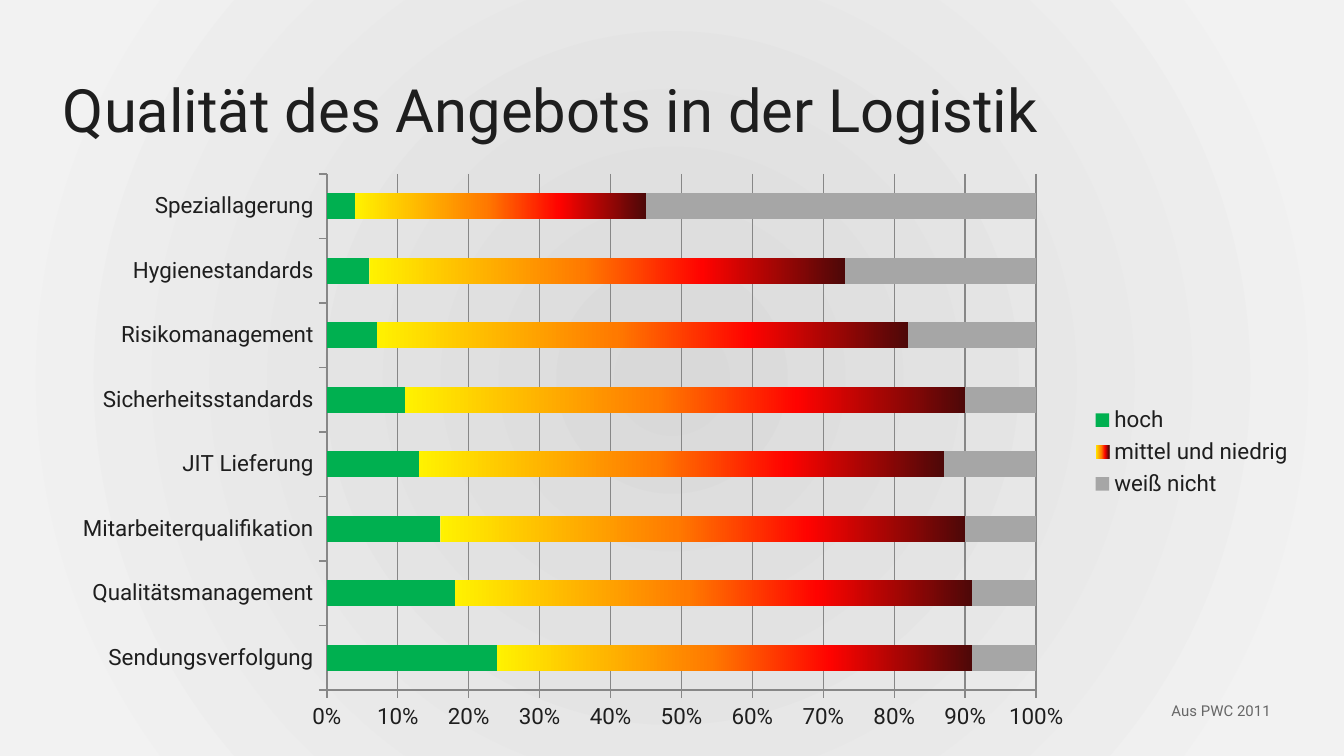
from dataclasses import dataclass
from typing import Union

from lxml.etree import SubElement
from pptx import Presentation
from pptx.chart.data import CategoryChartData
from pptx.dml.color import RGBColor
from pptx.enum.chart import XL_CHART_TYPE as ChartType
from pptx.enum.chart import XL_LEGEND_POSITION as LegendPosition
from pptx.enum.chart import XL_TICK_MARK as TickMark
from pptx.enum.text import MSO_ANCHOR as Anchor
from pptx.enum.text import MSO_AUTO_SIZE as AutoSize
from pptx.enum.text import PP_ALIGN as Align
from pptx.oxml import parse_xml
from pptx.oxml.ns import nsdecls, qn
from pptx.util import Cm, Pt


@dataclass(frozen=True)
class Gradient:
    stops: tuple[tuple[int, str], ...]
    radial: bool = False


@dataclass(frozen=True)
class Theme:
    font: str = "Roboto"
    ink: str = "1E1E1E"
    muted: str = "666666"
    grid: str = "878787"
    high: str = "00B050"
    unknown: str = "A6A6A6"
    rated: Gradient = Gradient(
        ((0, "FFF200"), (45, "FF7A00"), (70, "FF0300"), (100, "4D0808"))
    )
    backdrop: Gradient = Gradient(((0, "D9D9D9"), (90, "F2F2F2")), radial=True)
    title_size: int = 32
    chart_size: int = 12
    source_size: int = 8


@dataclass(frozen=True)
class Box:
    left: float
    top: float
    width: float
    height: float

    def lengths(self) -> tuple[Cm, Cm, Cm, Cm]:
        return Cm(self.left), Cm(self.top), Cm(self.width), Cm(self.height)


@dataclass(frozen=True)
class Rating:
    name: str
    shares: tuple[float, ...]
    paint: Union[str, Gradient]


THEME = Theme()
TITLE_BOX = Box(1.09, 1.27, 23.6, 1.22)
CHART_BOX = Box(1.09, 3.07, 23.6, 10.95)
SOURCE_BOX = Box(21.89, 13.13, 3, 0.61)
PLOT_AREA = {"x": 0.2156, "y": 0.02, "w": 0.568, "h": 0.891}

SERVICES = (
    "Sendungsverfolgung",
    "Qualitätsmanagement",
    "Mitarbeiterqualifikation",
    "JIT Lieferung",
    "Sicherheitsstandards",
    "Risikomanagement",
    "Hygienestandards",
    "Speziallagerung",
)
RATINGS = (
    Rating("hoch", (0.24, 0.18, 0.16, 0.13, 0.11, 0.07, 0.06, 0.04), THEME.high),
    Rating(
        "mittel und niedrig",
        (0.67, 0.73, 0.74, 0.74, 0.79, 0.75, 0.67, 0.41),
        THEME.rated,
    ),
    Rating("weiß nicht", (0.09, 0.09, 0.1, 0.13, 0.1, 0.18, 0.27, 0.55), THEME.unknown),
)


def apply_paint(fill, owner, paint: Union[str, Gradient]) -> None:
    fill.solid()
    if isinstance(paint, str):
        fill.fore_color.rgb = RGBColor.from_string(paint)
        return
    stops = "".join(
        f'<a:gs pos="{place * 1000}"><a:srgbClr val="{color}"/></a:gs>'
        for place, color in paint.stops
    )
    direction = (
        '<a:path path="circle"><a:fillToRect l="50000" t="50000" r="50000" b="50000"/></a:path>'
        if paint.radial
        else '<a:lin ang="0" scaled="0"/>'
    )
    gradient = parse_xml(
        f'<a:gradFill rotWithShape="1" {nsdecls("a")}>'
        f"<a:gsLst>{stops}</a:gsLst>{direction}</a:gradFill>"
    )
    solid = next(owner.iter(qn("a:solidFill")))
    solid.getparent().replace(solid, gradient)


def style_font(font, size: int, color: str) -> None:
    font.name = THEME.font
    font.size = Pt(size)
    font.color.rgb = RGBColor.from_string(color)


def write_line(frame, words: str, size: int, color: str) -> None:
    paragraph = frame.paragraphs[0]
    paragraph.alignment = Align.LEFT
    run = paragraph.add_run()
    run.text = words
    style_font(run.font, size, color)


def add_title(slide, words: str) -> None:
    title = slide.shapes.title
    title.left, title.top, title.width, title.height = TITLE_BOX.lengths()
    frame = title.text_frame
    frame.auto_size = AutoSize.NONE
    frame.vertical_anchor = Anchor.TOP
    frame.margin_left = frame.margin_right = Cm(0.1)
    frame.margin_top = frame.margin_bottom = Cm(0.1)
    write_line(frame, words, THEME.title_size, THEME.ink)


def place_plot(chart) -> None:
    plot_area = next(chart.element.iter(qn("c:plotArea")))
    for old in plot_area.findall(qn("c:layout")):
        plot_area.remove(old)
    layout = parse_xml(f'<c:layout {nsdecls("c")}/>')
    plot_area.insert(0, layout)
    manual = SubElement(layout, qn("c:manualLayout"))
    settings = {"layoutTarget": "inner", "xMode": "edge", "yMode": "edge", **PLOT_AREA}
    for tag, value in settings.items():
        SubElement(manual, qn(f"c:{tag}")).set("val", str(value))


def style_line(line) -> None:
    line.color.rgb = RGBColor.from_string(THEME.grid)
    line.width = Pt(0.75)


def add_rating_chart(slide) -> None:
    ratings_data = CategoryChartData(number_format="0%")
    ratings_data.categories = SERVICES
    for rating in RATINGS:
        ratings_data.add_series(rating.name, rating.shares)
    chart = slide.shapes.add_chart(
        ChartType.BAR_STACKED, *CHART_BOX.lengths(), ratings_data
    ).chart
    style_font(chart.font, THEME.chart_size, THEME.ink)
    chart.has_title = False
    chart.has_legend = True
    chart.legend.position = LegendPosition.RIGHT
    chart.legend.include_in_layout = False

    plot = chart.plots[0]
    plot.gap_width = 150
    plot.overlap = 100
    plot.vary_by_categories = False
    for series, rating in zip(plot.series, RATINGS):
        apply_paint(series.format.fill, series.format.element if hasattr(series.format, "element") else series._element, rating.paint)

    for axis in (chart.category_axis, chart.value_axis):
        axis.major_tick_mark = TickMark.OUTSIDE
        axis.minor_tick_mark = TickMark.NONE
        style_line(axis.format.line)
    shares = chart.value_axis
    shares.minimum_scale, shares.maximum_scale, shares.major_unit = 0, 1, 0.1
    shares.tick_labels.number_format = "0%"
    shares.tick_labels.number_format_is_linked = False
    shares.has_major_gridlines = True
    style_line(shares.major_gridlines.format.line)
    place_plot(chart)


def add_source(slide, words: str) -> None:
    frame = slide.shapes.add_textbox(*SOURCE_BOX.lengths()).text_frame
    frame.word_wrap = True
    frame.auto_size = AutoSize.SHAPE_TO_FIT_TEXT
    write_line(frame, words, THEME.source_size, THEME.muted)


def main() -> None:
    deck = Presentation()
    deck.slide_width, deck.slide_height = Cm(25.4), Cm(14.29)
    slide = deck.slides.add_slide(deck.slide_layouts[5])
    apply_paint(slide.background.fill, slide.element, THEME.backdrop)
    add_title(slide, "Qualität des Angebots in der Logistik")
    add_rating_chart(slide)
    add_source(slide, "Aus PWC 2011")
    deck.save("out.pptx")


if __name__ == "__main__":
    main()
